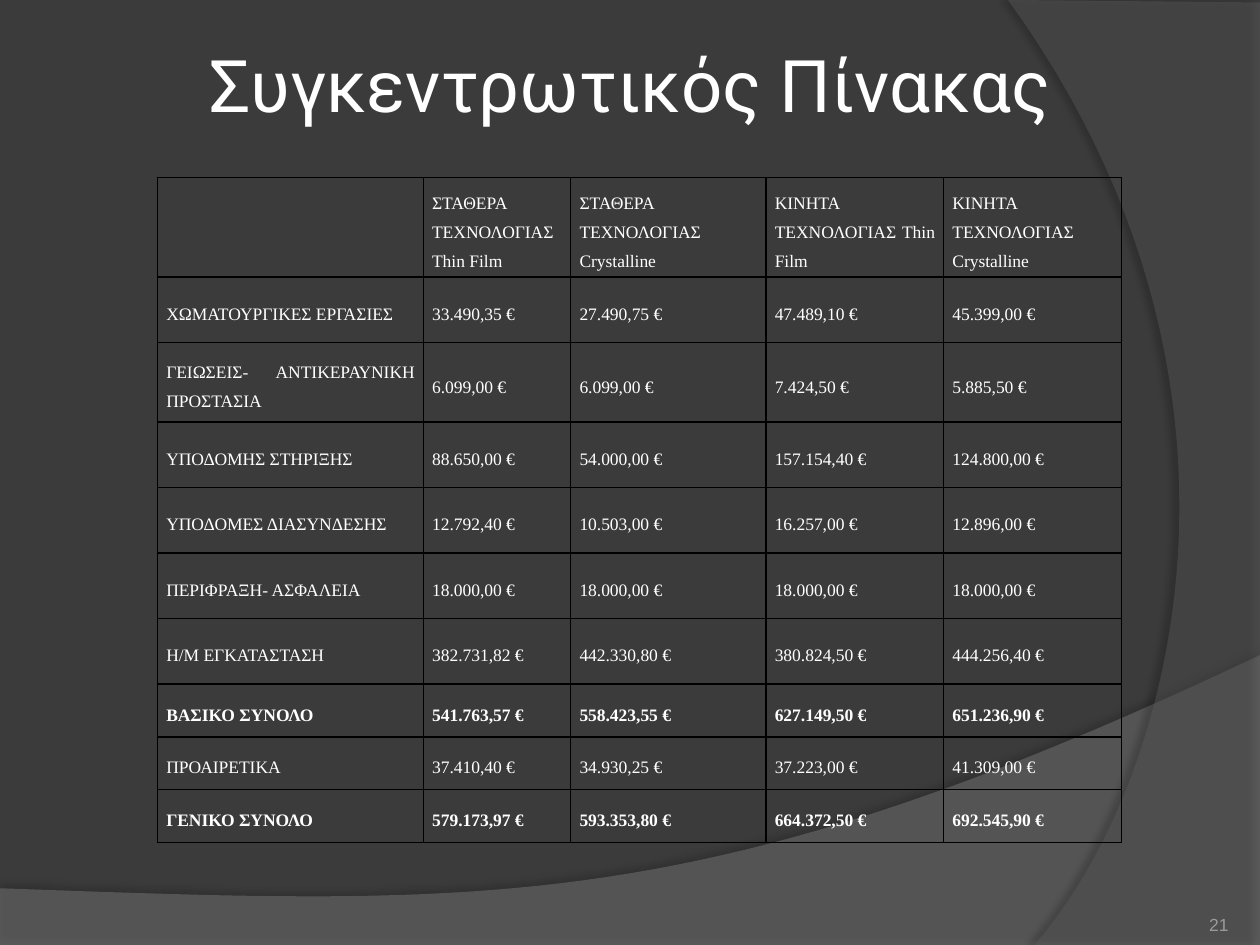
import pptx
import pptx.dml.color
import pptx.enum.text
import pptx.oxml
import pptx.oxml.ns
import pptx.util
from pptx.util import Inches
import lxml.etree

COLORS = {
    "background": "3B3B3B",
    "lower_wave": "7F7F7F",
    "right_wave": "5E5E5E",
    "text": "FFFFFF",
    "border": "000000",
    "number": "9D9B9A",
}
ALIGN = pptx.enum.text.PP_ALIGN
ANCHOR = pptx.enum.text.MSO_ANCHOR
NAMESPACE = pptx.oxml.ns.nsdecls("a")


def write_text(frame, text, size, font, color="text", align=ALIGN.JUSTIFY, spacing=1.0, bold=False):
    paragraph = frame.paragraphs[0]
    paragraph.alignment = align
    paragraph.line_spacing = spacing
    run = paragraph.add_run()
    run.text = text
    run.font.size = pptx.util.Pt(size)
    run.font.name = font
    run.font.bold = bold
    run.font.color.rgb = pptx.dml.color.RGBColor.from_string(COLORS[color])


def curve_points(start, control_1, control_2, end, steps=48):
    points = []
    for step in range(1, steps + 1):
        t = step / steps
        weights = ((1 - t) ** 3, 3 * t * (1 - t) ** 2, 3 * t ** 2 * (1 - t), t ** 3)
        corners = (start, control_1, control_2, end)
        points.append(tuple(sum(w * c[axis] for w, c in zip(weights, corners)) for axis in (0, 1)))
    return points


presentation = pptx.Presentation()
presentation.slide_width = Inches(10)
presentation.slide_height = Inches(7.5)
slide = presentation.slides.add_slide(presentation.slide_layouts[6])
slide.background.fill.solid()
slide.background.fill.fore_color.rgb = pptx.dml.color.RGBColor.from_string(COLORS["background"])

lower_wave = [(0, 7.05), (0, 7.5), (10, 7.5), (10, 5.2)]
lower_wave += curve_points((10, 5.2), (5.59, 7.29), (3.91, 7.19), (0, 7.05))
right_wave = [(10, 0.02), (10, 7.5), (8.21, 7.5)]
right_wave += curve_points((8.21, 7.5), (9.35, 6.19), (10.18, 3), (8, 0))

waves = [
    ("lower_wave", lower_wave, 45, 35, 3.5, 270),
    ("right_wave", right_wave, 40, 45, 4, 180),
]
for name, points, opacity, shadow_opacity, distance, angle in waves:
    outline = [(Inches(x), Inches(y)) for x, y in points]
    builder = slide.shapes.build_freeform(*outline[0])
    builder.add_line_segments(outline[1:], close=True)
    shape = builder.convert_to_shape()
    shape.line.fill.background()
    shape.fill.solid()
    shape.fill.fore_color.rgb = pptx.dml.color.RGBColor.from_string(COLORS[name])
    fill_color = shape._element.spPr.find(".//" + pptx.oxml.ns.qn("a:srgbClr"))
    lxml.etree.SubElement(fill_color, pptx.oxml.ns.qn("a:alpha"), val=str(opacity * 1000))
    shape._element.spPr.append(pptx.oxml.parse_xml(
        f'<a:effectLst {NAMESPACE}><a:outerShdw blurRad="{pptx.util.Pt(4)}" '
        f'dist="{pptx.util.Pt(distance)}" dir="{angle * 60000}" algn="ctr" rotWithShape="0">'
        f'<a:srgbClr val="{COLORS["border"]}"><a:alpha val="{shadow_opacity * 1000}"/></a:srgbClr>'
        f'</a:outerShdw></a:effectLst>'))

title = slide.shapes.add_textbox(Inches(0.5), Inches(0.3), Inches(9), Inches(0.72)).text_frame
title.word_wrap = True
title.vertical_anchor = ANCHOR.MIDDLE
title.margin_left = title.margin_right = title.margin_top = title.margin_bottom = Inches(0.05)
write_text(title, "Συγκεντρωτικός Πίνακας", size=41.4, font="Roboto", align=ALIGN.CENTER)

rows = [
    ("", "ΣΤΑΘΕΡΑ ΤΕΧΝΟΛΟΓΙΑΣ Thin Film", "ΣΤΑΘΕΡΑ ΤΕΧΝΟΛΟΓΙΑΣ Crystalline",
     "ΚΙΝΗΤΑ ΤΕΧΝΟΛΟΓΙΑΣ Thin Film", "ΚΙΝΗΤΑ ΤΕΧΝΟΛΟΓΙΑΣ Crystalline"),
    ("ΧΩΜΑΤΟΥΡΓΙΚΕΣ ΕΡΓΑΣΙΕΣ", "33.490,35 €", "27.490,75 €", "47.489,10 €", "45.399,00 €"),
    ("ΓΕΙΩΣΕΙΣ- ΑΝΤΙΚΕΡΑΥΝΙΚΗ ΠΡΟΣΤΑΣΙΑ", "6.099,00 €", "6.099,00 €", "7.424,50 €", "5.885,50 €"),
    ("ΥΠΟΔΟΜΗΣ ΣΤΗΡΙΞΗΣ", "88.650,00 €", "54.000,00 €", "157.154,40 €", "124.800,00 €"),
    ("ΥΠΟΔΟΜΕΣ ΔΙΑΣΥΝΔΕΣΗΣ", "12.792,40 €", "10.503,00 €", "16.257,00 €", "12.896,00 €"),
    ("ΠΕΡΙΦΡΑΞΗ- ΑΣΦΑΛΕΙΑ", "18.000,00 €", "18.000,00 €", "18.000,00 €", "18.000,00 €"),
    ("Η/Μ ΕΓΚΑΤΑΣΤΑΣΗ", "382.731,82 €", "442.330,80 €", "380.824,50 €", "444.256,40 €"),
    ("ΒΑΣΙΚΟ ΣΥΝΟΛΟ", "541.763,57 €", "558.423,55 €", "627.149,50 €", "651.236,90 €"),
    ("ΠΡΟΑΙΡΕΤΙΚΑ", "37.410,40 €", "34.930,25 €", "37.223,00 €", "41.309,00 €"),
    ("ΓΕΝΙΚΟ ΣΥΝΟΛΟ", "579.173,97 €", "593.353,80 €", "664.372,50 €", "692.545,90 €"),
]
column_widths = [2.11, 1.17, 1.55, 1.41, 1.41]
row_heights = [0.79, 0.52, 0.63] + [0.52] * 4 + [0.42] * 3
table = slide.shapes.add_table(len(rows), len(column_widths), Inches(1.25), Inches(1.41),
                               Inches(7.66), Inches(5.3)).table
table.first_row = False
table.horz_banding = False
for column, width in zip(table.columns, column_widths):
    column.width = Inches(width)
for row, height, values in zip(table.rows, row_heights, rows):
    row.height = Inches(height)
    for cell, value in zip(row.cells, values):
        cell.vertical_anchor = ANCHOR.MIDDLE
        cell.margin_left = cell.margin_right = Inches(0.07)
        cell.margin_top = cell.margin_bottom = 0
        if value:
            write_text(cell.text_frame, value, size=10, font="Times New Roman", spacing=1.5,
                       bold=values[0].endswith("ΣΥΝΟΛΟ"))
        for side in ("lnL", "lnR", "lnT", "lnB"):
            cell._tc.get_or_add_tcPr().append(pptx.oxml.parse_xml(
                f'<a:{side} {NAMESPACE} w="{pptx.util.Pt(1)}"><a:solidFill>'
                f'<a:srgbClr val="{COLORS["border"]}"/></a:solidFill></a:{side}>'))
        cell.fill.background()

number = slide.shapes.add_textbox(Inches(8.92), Inches(7.02), Inches(0.83), Inches(0.4)).text_frame
number.word_wrap = True
number.vertical_anchor = ANCHOR.BOTTOM
number.margin_left = number.margin_right = number.margin_top = number.margin_bottom = 0
write_text(number, "21", size=10, font="Arial", color="number", align=ALIGN.RIGHT)

presentation.save("out.pptx")
